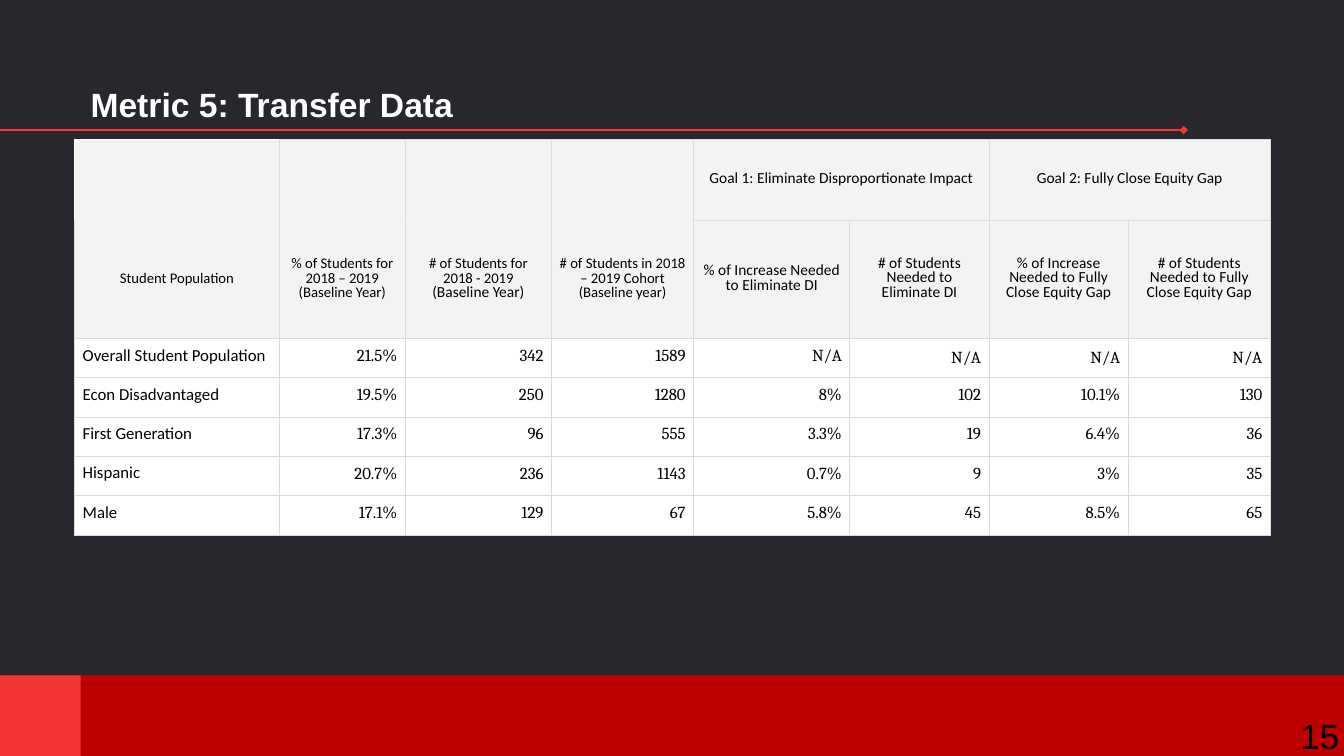
from lxml import etree
from pptx import Presentation
from pptx.dml.color import RGBColor
from pptx.enum.shapes import MSO_CONNECTOR, MSO_SHAPE
from pptx.enum.text import MSO_ANCHOR, PP_ALIGN
from pptx.oxml.ns import qn
from pptx.util import Inches, Pt

LEFT, CENTER, RIGHT = PP_ALIGN.LEFT, PP_ALIGN.CENTER, PP_ALIGN.RIGHT
BOTTOM, MIDDLE = MSO_ANCHOR.BOTTOM, MSO_ANCHOR.MIDDLE
RECTANGLE, STRAIGHT = MSO_SHAPE.RECTANGLE, MSO_CONNECTOR.STRAIGHT

COLORS = {
    "background": "27272D",
    "bar": "BC0000",
    "accent": "F63536",
    "header": "F3F3F3",
    "grid": "DBDBDB",
    "white": "FFFFFF",
    "black": "000000",
}

COLUMN_WIDTHS = [2.03, 1.25, 1.45, 1.41, 1.55, 1.38, 1.38, 1.41]
ROW_HEIGHTS = [0.81, 1.17] + [0.39] * 5
BASELINE_COLUMNS = 4
GOALS = {
    4: "Goal 1: Eliminate Disproportionate Impact",
    6: "Goal 2: Fully Close Equity Gap",
}
# Each heading is a list of (paragraph, size)
HEADINGS = [
    [("Student Population", 10.5)],
    [("% of Students for 2018 – 2019 (Baseline Year)", 10.5)],
    [("# of Students for 2018 - 2019", 10.5), ("(Baseline Year)", 11)],
    [("# of Students in 2018 – 2019 Cohort", 10.5), ("(Baseline year)", 10.5)],
    [("% of Increase Needed to Eliminate DI", 11)],
    [("# of Students Needed to Eliminate DI", 11)],
    [("% of Increase Needed to Fully Close Equity Gap", 11)],
    [("# of Students Needed to Fully Close Equity Gap", 11)],
]
POPULATIONS = [
    ["Overall Student Population", "21.5%", "342", "1589", "N/A", "N/A", "N/A", "N/A"],
    ["Econ Disadvantaged", "19.5%", "250", "1280", "8%", "102", "10.1%", "130"],
    ["First Generation", "17.3%", "96", "555", "3.3%", "19", "6.4%", "36"],
    ["Hispanic", "20.7%", "236", "1143", "0.7%", "9", "3%", "35"],
    ["Male", "17.1%", "129", "67", "5.8%", "45", "8.5%", "65"],
]


def rgb(name):
    return RGBColor.from_string(COLORS[name])


def write(paragraph, text, size=12, font="Calibri", color="black",
          bold=False, align=LEFT, spacing=None):
    run = paragraph.add_run()
    run.text = text
    run.font.size = Pt(size)
    run.font.name = font
    run.font.bold = bold
    run.font.color.rgb = rgb(color)
    paragraph.alignment = align
    if spacing:
        paragraph.line_spacing = Pt(spacing)


class SlideBuilder:
    line_spacing = 10.5
    border_width = 0.82

    def __init__(self, slide):
        self.slide = slide
        slide.background.fill.solid()
        slide.background.fill.fore_color.rgb = rgb("background")

    def block(self, left, top, width, height, color):
        block = self.slide.shapes.add_shape(
            RECTANGLE, Inches(left), Inches(top), Inches(width), Inches(height))
        block.shadow.inherit = False
        block.fill.solid()
        block.fill.fore_color.rgb = rgb(color)
        block.line.fill.background()

    def rule(self, start, end, y, color):
        rule = self.slide.shapes.add_connector(
            STRAIGHT, Inches(start), Inches(y), Inches(end), Inches(y))
        rule.line.color.rgb = rgb(color)
        rule.line.width = Pt(1.5)
        etree.SubElement(rule.line._get_or_add_ln(), qn("a:tailEnd"), type="diamond")
        etree.SubElement(rule._element.spPr, qn("a:effectLst"))

    def text(self, left, top, width, height, text, anchor, **style):
        frame = self.slide.shapes.add_textbox(
            Inches(left), Inches(top), Inches(width), Inches(height)).text_frame
        frame.word_wrap = True
        frame.vertical_anchor = anchor
        frame.margin_left = frame.margin_right = Inches(0.1)
        frame.margin_top = frame.margin_bottom = Inches(0.1)
        write(frame.paragraphs[0], text, **style)

    def table(self, left, top, widths, heights):
        table = self.slide.shapes.add_table(
            len(heights), len(widths), Inches(left), Inches(top),
            Inches(sum(widths)), Inches(sum(heights))).table
        table.first_row = table.horz_banding = False
        for column, width in zip(table.columns, widths):
            column.width = Inches(width)
        for row, height in zip(table.rows, heights):
            row.height = Inches(height)
        return table

    def cell(self, cell, fill, **sides):
        """Format a cell; sides override the border colour of L, R, T or B."""
        cell.vertical_anchor = MIDDLE
        cell.margin_left = cell.margin_right = Inches(0.08)
        cell.margin_top = cell.margin_bottom = Inches(0.04)
        properties = cell._tc.get_or_add_tcPr()
        for side in "LRTB":
            border = etree.SubElement(
                properties, qn(f"a:ln{side}"), w=str(Pt(self.border_width)))
            solid = etree.SubElement(border, qn("a:solidFill"))
            etree.SubElement(solid, qn("a:srgbClr"), val=COLORS[sides.get(side, "grid")])
        cell.fill.solid()
        cell.fill.fore_color.rgb = rgb(fill)

    def transfer_table(self):
        table = self.table(0.74, 1.38, COLUMN_WIDTHS, ROW_HEIGHTS)

        # Goal row
        for column in range(len(COLUMN_WIDTHS)):
            sides = {"B": "header"} if column < BASELINE_COLUMNS else {}
            if column == 0:
                sides.update(L="white", T="white")
            self.cell(table.cell(0, column), "header", **sides)
        for column, goal in GOALS.items():
            cell = table.cell(0, column)
            cell.merge(table.cell(0, column + 1))
            write(cell.text_frame.paragraphs[0], goal, size=11, align=CENTER,
                  spacing=self.line_spacing)

        # Column headings
        for column, heading in enumerate(HEADINGS):
            cell = table.cell(1, column)
            sides = {"T": "header"} if column < BASELINE_COLUMNS else {}
            self.cell(cell, "header", **sides)
            frame = cell.text_frame
            for index, (text, size) in enumerate(heading):
                paragraph = frame.add_paragraph() if index else frame.paragraphs[0]
                write(paragraph, text, size=size, align=CENTER,
                      spacing=self.line_spacing)

        # Population rows
        for row, values in enumerate(POPULATIONS, start=2):
            for column, value in enumerate(values):
                cell = table.cell(row, column)
                self.cell(cell, "white")
                single_spaced = value == "N/A" and column > BASELINE_COLUMNS
                write(cell.text_frame.paragraphs[0], value,
                      font="Cambria" if column else "Calibri",
                      align=RIGHT if column else LEFT,
                      spacing=None if single_spaced else self.line_spacing)


def main():
    presentation = Presentation()
    presentation.slide_width = Inches(13.33)
    presentation.slide_height = Inches(7.5)
    builder = SlideBuilder(presentation.slides.add_slide(presentation.slide_layouts[6]))

    # Title rule and footer bar
    builder.rule(-0.02, 11.74, 1.29, "accent")
    builder.block(0, 6.7, 13.33, 0.8, "bar")
    builder.block(0, 6.7, 0.8, 0.8, "accent")

    # Title and page number
    builder.text(0.8, 0.53, 10.93, 0.8, "Metric 5: Transfer Data", BOTTOM,
                 size=24, font="Arial", color="white", bold=True)
    builder.text(12.8, 7.09, 0.68, 0.41, "15", MIDDLE, size=24.9, font="Arial")

    # Transfer data
    builder.transfer_table()

    presentation.save("out.pptx")


if __name__ == "__main__":
    main()
